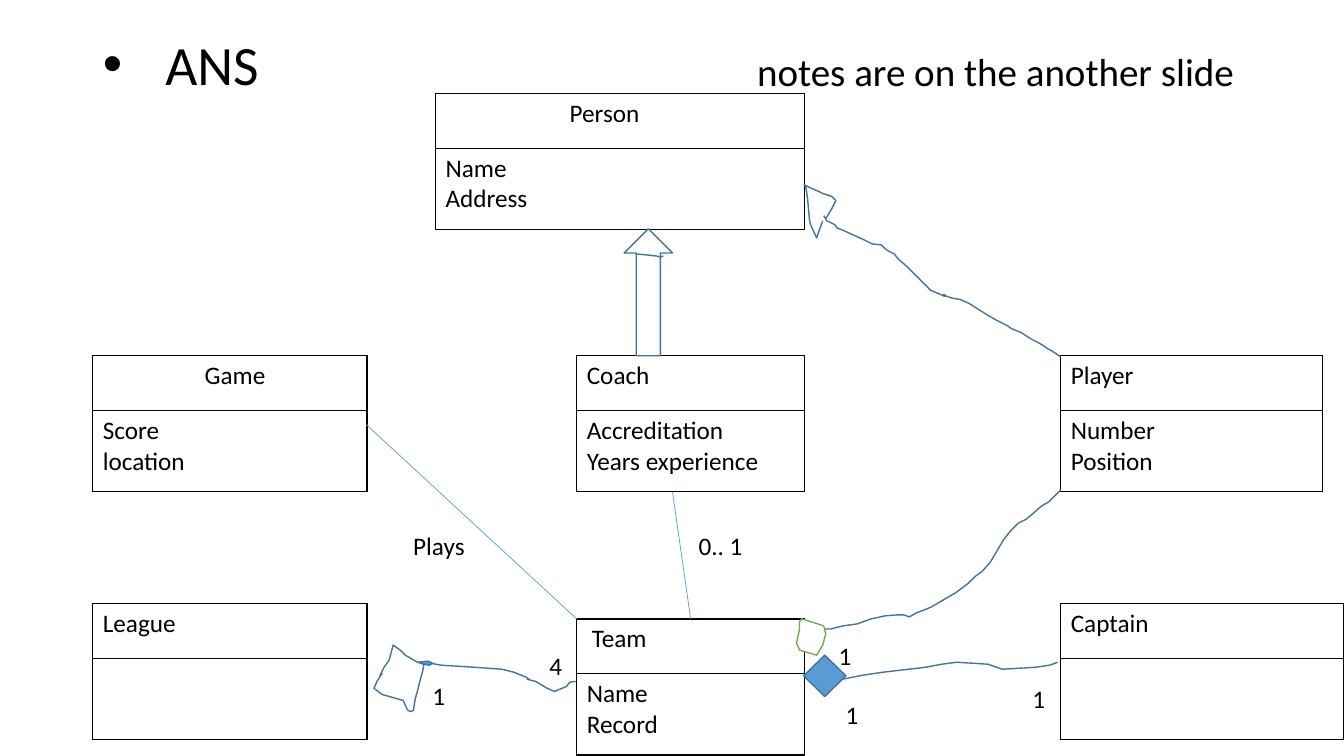
import pptx
import pptx.util
import pptx.dml.color
import pptx.enum.shapes
import pptx.enum.text
import pptx.oxml
import lxml.etree
from pptx.util import Inches

SHAPES = pptx.enum.shapes.MSO_SHAPE
FIT = pptx.enum.text.MSO_AUTO_SIZE
BLACK, WHITE, BLUE, DARK_BLUE, GREEN = "000000", "FFFFFF", "5B9BD5", "43739E", "70AD47"
HEAD, BODY = 0.54, 0.81

# name, attributes, left, top, width, indent of the name
CLASSES = [
    ("Person", "Name\nAddress", 4.32, 0.93, 3.66, 1.23),
    ("Game", "Score\nlocation", 0.92, 3.53, 2.72, 1.01),
    ("Coach", "Accreditation\nYears experience", 5.72, 3.53, 2.26, 0),
    ("Player", "Number\nPosition", 10.52, 3.53, 2.6, 0),
    ("League", "", 0.92, 5.99, 2.72, 0),
    ("Team", "Name\nRecord", 5.72, 6.14, 2.26, 0.05),
    ("Captain", "", 10.52, 5.99, 2.81, 0),
]
LABELS = [
    ("0.. 1", 6.83, 5.21, 0.64), ("Plays", 4, 5.21, 0.72),
    ("1", 8.22, 6.3, 0.33), ("4", 5.35, 6.4, 0.33), ("1", 4.19, 6.7, 0.33),
    ("1", 8.29, 6.89, 0.33), ("1", 10.14, 6.73, 0.33),
]
ARROW_SEAM = [(6.32, 2.52), (6.51, 2.54), (6.55, 2.55), (6.58, 2.54)]
PLAYER_TO_PERSON = [
    (10.52, 3.54), (10.43, 3.48), (10.39, 3.46), (10.35, 3.43), (10.28, 3.39),
    (10.22, 3.36), (10.13, 3.3), (10.03, 3.26), (9.99, 3.23), (9.87, 3.17),
    (9.8, 3.13), (9.61, 3.01), (9.52, 2.97), (9.45, 2.96), (9.39, 2.94),
    (9.36, 2.92), (9.37, 2.94), (9.23, 2.88), (9.13, 2.78), (8.99, 2.64),
    (8.91, 2.57), (8.87, 2.52), (8.81, 2.49), (8.77, 2.46), (8.74, 2.43),
    (8.65, 2.42), (8.57, 2.38), (8.46, 2.33), (8.35, 2.28), (8.3, 2.26),
    (8.28, 2.23), (8.2, 2.19), (8.17, 2.14),
]
PERSON_HEAD_TOP = [(8.19, 2.17), (8.25, 2.07), (8.29, 1.99), (8.25, 1.95),
                   (8.16, 1.92), (8.12, 1.9), (8.03, 1.86), (7.97, 1.83)]
PERSON_HEAD_SIDE = [(8.16, 2.19), (8.12, 2.3), (8.1, 2.36), (8.04, 2.23), (8.03, 2.19),
                    (8.01, 1.97), (8, 1.9), (7.99, 1.84)]
PLAYER_TO_TEAM = [
    (10.52, 4.86), (10.4, 4.98), (10.33, 5.02), (10.24, 5.1), (10.18, 5.15),
    (10.1, 5.19), (10.02, 5.27), (9.95, 5.36), (9.88, 5.48), (9.82, 5.58),
    (9.74, 5.67), (9.67, 5.72), (9.6, 5.79), (9.48, 5.88), (9.36, 5.95),
    (9.24, 6.02), (9.17, 6.05), (9.09, 6.08), (9.02, 6.12), (8.96, 6.1),
    (8.9, 6.1), (8.78, 6.11), (8.64, 6.14), (8.5, 6.19), (8.36, 6.21),
    (8.24, 6.24), (8.14, 6.24),
]
TEAM_DIAMOND = [(8.17, 6.21), (8.05, 6.17), (7.95, 6.14), (7.93, 6.17), (7.93, 6.24),
                (7.9, 6.38), (7.93, 6.45), (8.1, 6.5), (8.16, 6.4), (8.19, 6.29)]
LEAGUE_TO_TEAM = [
    (4.14, 6.57), (4.02, 6.5), (3.97, 6.45), (3.9, 6.4), (3.86, 6.55),
    (3.81, 6.62), (3.77, 6.7), (3.79, 6.68), (3.74, 6.76), (3.71, 6.83),
    (3.79, 6.89), (3.93, 6.93), (4, 6.95), (4.04, 7.04), (4.07, 7.06),
    (4.1, 7.05), (4.12, 6.93), (4.14, 6.86), (4.17, 6.74), (4.19, 6.67),
    (4.21, 6.57), (4.38, 6.6), (4.7, 6.62), (4.98, 6.64), (5.1, 6.67),
    (5.22, 6.72), (5.25, 6.74), (5.23, 6.74), (5.31, 6.76), (5.43, 6.83),
    (5.5, 6.86), (5.62, 6.81), (5.65, 6.77), (5.71, 6.76),
]
LEAGUE_KNOT = [(4.14, 6.57), (4.2, 6.59), (4.26, 6.6), (4.29, 6.58), (4.25, 6.56)]
TEAM_TO_CAPTAIN = [(8.35, 6.74), (8.55, 6.7), (8.75, 6.67), (9.18, 6.62), (9.34, 6.59),
                   (9.49, 6.57), (9.8, 6.59), (9.94, 6.64), (10.27, 6.62), (10.41, 6.6),
                   (10.49, 6.57)]


def rgb(value):
    return pptx.dml.color.RGBColor.from_string(value)


def write(tf, text, size=18, color=BLACK, indent=0):
    for i, line in enumerate(text.split("\n")):
        p = tf.add_paragraph() if i else tf.paragraphs[0]
        if indent:
            p._p.get_or_add_pPr().set("marL", str(Inches(indent)))
        r = p.add_run()
        r.text = line
        r.font.name = "Calibri"
        r.font.size = pptx.util.Pt(size)
        r.font.color.rgb = rgb(color)


def add_title(s, text):
    sp = s.shapes.title
    sp.left, sp.top, sp.width, sp.height = map(Inches, (0.92, 0.4, 11.5, 0.53))
    tf = sp.text_frame
    tf.auto_size = FIT.NONE
    tf.vertical_anchor = pptx.enum.text.MSO_ANCHOR.MIDDLE
    write(tf, text, size=39.6, indent=0.62)
    p = tf.paragraphs[0]
    pPr = p._p.get_or_add_pPr()
    pPr.set("indent", str(Inches(-0.62)))
    for tag, key, value in (("buFont", "typeface", "Arial"), ("buChar", "char", "•")):
        lxml.etree.SubElement(pPr, pptx.oxml.ns.qn("a:" + tag)).set(key, value)
    p.alignment = pptx.enum.text.PP_ALIGN.LEFT
    p.line_spacing = 0.9


def add_label(s, text, left, top, width, height=0.4, size=18):
    tf = s.shapes.add_textbox(*map(Inches, (left, top, width, height))).text_frame
    tf.word_wrap = False
    tf.auto_size = FIT.SHAPE_TO_FIT_TEXT
    write(tf, text, size=size)
    return tf


def border(cell, color):
    tcPr = cell._tc.get_or_add_tcPr()
    for i, side in enumerate(("lnL", "lnR", "lnT", "lnB")):
        tcPr.insert(i, pptx.oxml.parse_xml(
            f'<a:{side} {pptx.oxml.ns.nsdecls("a")} w="12700"><a:solidFill>'
            f'<a:srgbClr val="{color}"/></a:solidFill></a:{side}>'))


def add_class(s, name, attributes, left, top, width, indent):
    frame = s.shapes.add_table(2, 1, *map(Inches, (left, top, width, HEAD + BODY)))
    table = frame.table
    table.first_row = table.horz_banding = False
    rows = ((HEAD, name, indent), (BODY, attributes, 0))
    for i, (height, text, offset) in enumerate(rows):
        table.rows[i].height = Inches(height)
        cell = table.cell(i, 0)
        cell.fill.solid()
        cell.fill.fore_color.rgb = rgb(WHITE)
        border(cell, BLACK)
        if text:
            write(cell.text_frame, text, indent=offset)


def paint(sp, fill=None, line=DARK_BLUE):
    sp.shadow.inherit = False
    if fill:
        sp.fill.solid()
        sp.fill.fore_color.rgb = rgb(fill)
    else:
        sp.fill.background()
    sp.line.color.rgb = rgb(line)
    sp.line.width = pptx.util.Pt(1)


def add_shape(s, kind, left, top, width, height, fill):
    paint(s.shapes.add_shape(kind, *map(Inches, (left, top, width, height))), fill)


def add_stroke(s, points, fill=None, line=DARK_BLUE):
    """Draw a hand-made outline, closed when it is filled."""
    start, *rest = [(Inches(x), Inches(y)) for x, y in points]
    builder = s.shapes.build_freeform(*start)
    builder.add_line_segments(rest, close=bool(fill))
    paint(builder.convert_to_shape(), fill, line)


def add_association(s, x1, y1, x2, y2):
    kind = pptx.enum.shapes.MSO_CONNECTOR.STRAIGHT
    line = s.shapes.add_connector(kind, *map(Inches, (x1, y1, x2, y2)))
    line.line.color.rgb = rgb(BLUE)
    line.line.width = pptx.util.Pt(0.5)
    lxml.etree.SubElement(line._element.spPr, pptx.oxml.ns.qn("a:effectLst"))


def main():
    prs = pptx.Presentation()
    prs.slide_width, prs.slide_height = Inches(13.33), Inches(7.5)
    s = prs.slides.add_slide(prs.slide_layouts[5])
    add_title(s, "ANS")
    remark = add_label(s, "notes are on the another slide", 7.51, 0.47, 4.81, 0.47, 27.9)
    remark.margin_left = remark.margin_right = 0
    remark.margin_top = remark.margin_bottom = 0
    for entry in CLASSES:
        add_class(s, *entry)
    add_shape(s, SHAPES.UP_ARROW, 6.19, 2.27, 0.48, 1.26, WHITE)
    for points in (ARROW_SEAM, PLAYER_TO_PERSON, PERSON_HEAD_TOP, PERSON_HEAD_SIDE,
                   PLAYER_TO_TEAM, LEAGUE_TO_TEAM, TEAM_TO_CAPTAIN):
        add_stroke(s, points)
    add_stroke(s, TEAM_DIAMOND, WHITE, GREEN)
    add_stroke(s, LEAGUE_KNOT, BLUE)
    add_association(s, 6.67, 4.88, 6.85, 6.14)
    add_association(s, 3.63, 4.21, 5.72, 6.14)
    add_shape(s, SHAPES.FLOWCHART_DECISION, 7.97, 6.5, 0.42, 0.41, BLUE)
    for label in LABELS:
        add_label(s, *label)
    prs.save("out.pptx")


if __name__ == "__main__":
    main()
